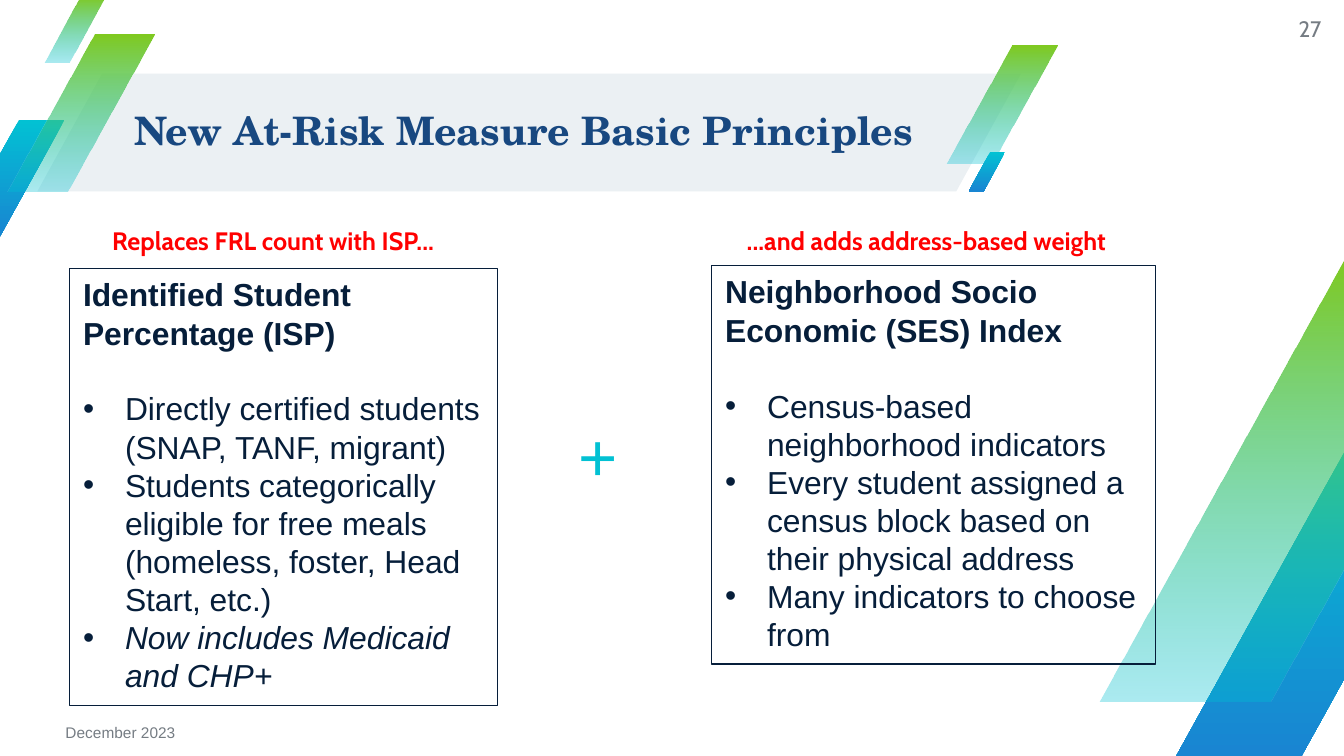
import dataclasses
import typing

import lxml.etree
import pptx
import pptx.dml.color
import pptx.enum.shapes
import pptx.enum.text
import pptx.oxml.ns
import pptx.util

ALIGN = pptx.enum.text.PP_ALIGN
ANCHOR = pptx.enum.text.MSO_ANCHOR
WIDTH, HEIGHT = pptx.util.Inches(13.33), pptx.util.Inches(7.5)
COLUMN, ROW = WIDTH / 160, HEIGHT / 90
PANEL_INSETS = (1.6, 0.8)
BOX_INSETS = (1.2, 0.6)
BULLET_INDENT = 5

COLOURS = {
    "banner": "EBF0F3", "teal": "02C1D3", "blue": "1985D2", "green": "7FCA20",
    "title": "184880", "ink": "061E3A", "grey": "757C83", "red": "FF0000",
}


class Area(typing.NamedTuple):
    """Left, top, width and height in grid columns and rows."""
    left: float
    top: float
    width: float
    height: float


@dataclasses.dataclass
class Slant:
    area: Area
    colours: tuple[str, ...]
    slope: float = 0.59


@dataclasses.dataclass
class Panel:
    area: Area
    caption: str
    caption_left: float
    heading: str
    bullets: tuple[str, ...]
    italic_bullets: tuple[str, ...] = ()


DEEP = ("teal", "blue")
FADING = ("green", "teal")
SLANTS = [
    Slant(Area(4.44, 8.76, 117.12, 14.04), ("banner",), 0.55),
    Slant(Area(-5.52, 14.28, 13.2, 14.04), DEEP),
    Slant(Area(112.68, 5.4, 13.2, 14.04), FADING),
    Slant(Area(0.9, 4.1, 17.52, 18.72), FADING),
    Slant(Area(5.28, -0.36, 7.32, 7.8), FADING),
    Slant(Area(115.32, 18.12, 4.32, 4.68), DEEP),
    Slant(Area(140.04, 51.24, 36.36, 38.76), DEEP),
    Slant(Area(130.92, 30.72, 49.56, 52.8), FADING),
]

PANELS = [
    Panel(
        Area(8.28, 31.95, 50.95, 52), "Replaces FRL count with ISP...", 7.68,
        "Identified Student Percentage (ISP)",
        ("Directly certified students (SNAP, TANF, migrant)",
         "Students categorically eligible for free meals (homeless, foster, Head Start, etc.)"),
        ("Now includes Medicaid and CHP+",),
    ),
    Panel(
        Area(84.72, 31.6, 52.85, 47.45), "...and adds address-based weight", 85.44,
        "Neighborhood Socio Economic (SES) Index",
        ("Census-based neighborhood indicators",
         "Every student assigned a census block based on their physical address",
         "Many indicators to choose from"),
    ),
]


def rgb(name: str) -> pptx.dml.color.RGBColor:
    return pptx.dml.color.RGBColor.from_string(COLOURS[name])


def place(shape, area: Area) -> None:
    shape.left, shape.width = int(area.left * COLUMN), int(area.width * COLUMN)
    shape.top, shape.height = int(area.top * ROW), int(area.height * ROW)


def draw_slant(page, slant: Slant) -> None:
    shape = page.shapes.add_shape(
        pptx.enum.shapes.MSO_SHAPE.PARALLELOGRAM, 0, 0, 0, 0)
    place(shape, slant.area)
    shape.adjustments[0] = slant.slope
    shape.shadow.inherit = False
    shape.line.fill.background()
    if len(slant.colours) == 1:
        shape.fill.solid()
        shape.fill.fore_color.rgb = rgb(slant.colours[0])
        return
    shape.fill.gradient()
    shape.fill.gradient_angle = 270
    for stop, colour in zip(shape.fill.gradient_stops, slant.colours):
        stop.color.rgb = rgb(colour)
    if slant.colours == FADING:
        last = list(shape.element.spPr.iter(pptx.oxml.ns.qn("a:srgbClr")))[-1]
        lxml.etree.SubElement(last, pptx.oxml.ns.qn("a:alpha"), val="33000")


def prepare_frame(shape, insets: tuple[float, float], anchor=ANCHOR.TOP):
    frame = shape.text_frame
    frame.word_wrap = True
    frame.auto_size = pptx.enum.text.MSO_AUTO_SIZE.NONE
    frame.vertical_anchor = anchor
    frame.margin_left = frame.margin_right = int(insets[0] * COLUMN)
    frame.margin_top = frame.margin_bottom = int(insets[1] * ROW)
    return frame


def write(para, text: str, *, size: float, colour: str, font: str = "Arial",
          bold: bool = False, italic: bool = False, align=ALIGN.LEFT,
          spacing: float = 1.0, after: float = 0) -> None:
    para.alignment = align
    para.line_spacing = spacing
    para.space_before = pptx.util.Pt(0)
    para.space_after = pptx.util.Pt(after)
    span = para.add_run()
    span.text = text
    span.font.name, span.font.size = font, pptx.util.Pt(size)
    span.font.bold, span.font.italic = bold, italic
    span.font.color.rgb = rgb(colour)


def set_bullet(para, shown: bool) -> None:
    properties = para._p.get_or_add_pPr()
    indent = int(BULLET_INDENT * COLUMN) if shown else 0
    properties.set("marL", str(indent))
    properties.set("indent", str(-indent))
    if shown:
        lxml.etree.SubElement(properties, pptx.oxml.ns.qn("a:buFont"), typeface="Arial")
        lxml.etree.SubElement(properties, pptx.oxml.ns.qn("a:buChar"), char="•")
    else:
        lxml.etree.SubElement(properties, pptx.oxml.ns.qn("a:buNone"))


def add_label(page, area: Area, text: str, insets=BOX_INSETS, anchor=ANCHOR.TOP,
              **style) -> None:
    box = page.shapes.add_textbox(0, 0, 0, 0)
    place(box, area)
    write(prepare_frame(box, insets, anchor).paragraphs[0], text, **style)


def fill_panel(page, box, panel: Panel) -> None:
    place(box, panel.area)
    box.line.color.rgb = rgb("ink")
    box.line.width = pptx.util.Pt(0.75)
    frame = prepare_frame(box, PANEL_INSETS)
    style = {"size": 22.7, "colour": "ink"}
    write(frame.paragraphs[0], panel.heading, bold=True, after=27, **style)
    set_bullet(frame.paragraphs[0], False)
    for text in panel.bullets + panel.italic_bullets:
        para = frame.add_paragraph()
        write(para, text, italic=text in panel.italic_bullets, **style)
        set_bullet(para, True)
    add_label(page, Area(panel.caption_left, 26.25, 49.68, 4.8), panel.caption,
              size=18, colour="red", font="Cabin", bold=True, align=ALIGN.CENTER)


def main() -> None:
    deck = pptx.Presentation()
    deck.slide_width, deck.slide_height = WIDTH, HEIGHT
    page = deck.slides.add_slide(deck.slide_layouts.get_by_name("Two Content"))
    title, *bodies = page.placeholders
    for slant in SLANTS:
        draw_slant(page, slant)
    # Bring the placeholders in front of the slants.
    for box in (title, *bodies):
        box.element.getparent().append(box.element)

    place(title, Area(15.96, 8.64, 105.48, 14.28))
    frame = prepare_frame(title, (0, 0), ANCHOR.MIDDLE)
    write(frame.paragraphs[0], "New At-Risk Measure Basic Principles", size=28,
          colour="title", font="TeX Gyre Schola", bold=True, spacing=0.9)
    for box, panel in zip(bodies, PANELS):
        fill_panel(page, box, panel)
    add_label(page, Area(67.32, 48.48, 48, 11.28), "+", PANEL_INSETS,
              size=48, colour="teal")
    add_label(page, Area(149.76, 0, 7.56, 6.84), "27", (0, 0), ANCHOR.MIDDLE,
              size=16, colour="grey", font="Cabin", align=ALIGN.RIGHT)
    add_label(page, Area(6.6, 85.44, 20.64, 3.48), "December 2023",
              size=11, colour="grey")
    deck.save("out.pptx")


if __name__ == "__main__":
    main()
